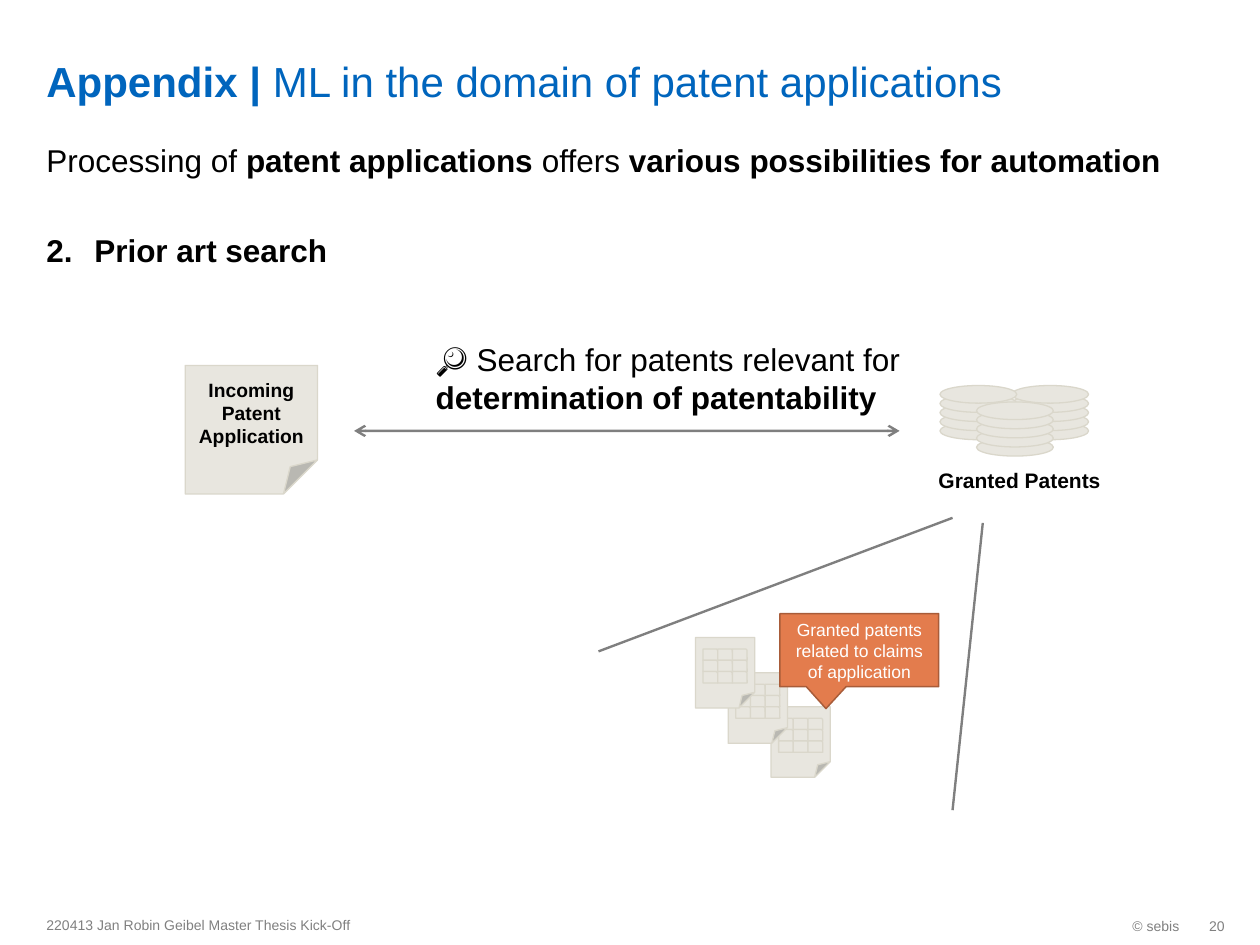
from pptx import Presentation
from pptx.dml.color import RGBColor
from pptx.enum.shapes import MSO_CONNECTOR as CONN, MSO_SHAPE as SHAPE
from pptx.enum.text import MSO_ANCHOR as ANCHOR, MSO_AUTO_SIZE as AUTO, PP_ALIGN as ALIGN
from pptx.oxml.ns import qn
from pptx.util import Inches, Pt
from lxml import etree

BLUE, BLACK, GREY, WHITE = "0065BD", "000000", "808080", "FFFFFF"
PAPER, EDGE, ORANGE, RUST = "E8E6DF", "DAD7CB", "E37C4D", "A85C39"

TITLE = [[("Appendix | ", True), ("ML in the domain of patent applications", False)]]
BODY = [
    [("Processing of ", False), ("patent applications ", True), ("offers ", False),
     ("various possibilities for automation", True)],
    [("Prior art search", True)],
]
SEARCH = [
    [("🔎 Search for patents relevant for", False)],
    [("determination of patentability", True)],
]
FOOTER = [
    ("© sebis", (7.7, 7.19, 1.76, 0.32), ALIGN.RIGHT, False, 0.1),
    ("220413 Jan Robin Geibel Master Thesis Kick-Off", (0.27, 7.18, 4.73, 0.32), ALIGN.LEFT, True, 0.1),
    ("20", (9.45, 7.19, 0.27, 0.32), ALIGN.RIGHT, False, 0),
]
COIN_STACKS = [(8.03, 3.06), (7.46, 3.06), (7.75, 3.19)]
COINS, COIN_W, COIN_H, COIN_SPAN = 5, 0.61, 0.14, 0.29
DOCUMENTS = [(6.12, 5.61), (5.78, 5.34), (5.52, 5.06)]
GRID, GRID_W, GRID_H = 3, 0.35, 0.27
LINES = [
    ((2.81, 3.42), (7.14, 3.42), True),
    ((7.56, 6.43), (7.8, 4.15), False),
    ((4.75, 5.17), (7.56, 4.11), False),
]


def color(value):
    return RGBColor.from_string(value)


def box(at):
    return [Inches(v) for v in at]


def write(sp, paragraphs, size, ink, align=ALIGN.LEFT, anchor=ANCHOR.TOP, wrap=True):
    tf = sp.text_frame
    tf.word_wrap = wrap
    tf.vertical_anchor = anchor
    for i, runs in enumerate(paragraphs):
        p = tf.add_paragraph() if i else tf.paragraphs[0]
        p.alignment = align
        for text, bold in runs:
            r = p.add_run()
            r.text = text
            r.font.name = "Arial"
            r.font.size = Pt(size)
            r.font.bold = bold
            r.font.color.rgb = color(ink)
    return tf


def add_text(s, at, *args, **kwargs):
    return write(s.shapes.add_textbox(*box(at)), *args, **kwargs)


def add_shape(shapes, kind, at, fill=PAPER, line=EDGE, width=0.75):
    sp = shapes.add_shape(kind, *box(at))
    sp.shadow.inherit = False
    sp.fill.solid()
    sp.fill.fore_color.rgb = color(fill)
    sp.line.color.rgb = color(line)
    sp.line.width = Pt(width)
    return sp


def add_page(shapes, at):
    sp = add_shape(shapes, SHAPE.FOLDED_CORNER, at)
    geometry = sp._element.spPr.find(qn("a:prstGeom"))
    guides = geometry.find(qn("a:avLst"))
    if guides is None:
        guides = etree.SubElement(geometry, qn("a:avLst"))
    etree.SubElement(guides, qn("a:gd"), name="adj", fmla="val 26500")
    return sp


def add_coins(s, left, top):
    shapes = s.shapes.add_group_shape().shapes
    step = COIN_SPAN / (COINS - 1)
    for i in reversed(range(COINS)):
        add_shape(shapes, SHAPE.OVAL, (left, top + i * step, COIN_W, COIN_H))


def add_document(s, left, top):
    shapes = s.shapes.add_group_shape().shapes
    add_page(shapes, (left, top, 0.47, 0.56))
    w, h = GRID_W / GRID, GRID_H / GRID
    for row in range(GRID):
        for col in range(GRID):
            add_shape(shapes, SHAPE.ROUND_1_RECTANGLE,
                      (left + 0.06 + col * w, top + 0.09 + row * h, w, h))


def add_line(s, start, end, arrows):
    cx = s.shapes.add_connector(CONN.STRAIGHT, *box(start + end))
    cx.line.color.rgb = color(BLACK)
    cx.line.width = Pt(1.35)
    spPr = cx._element.spPr
    ln = spPr.find(qn("a:ln"))
    etree.SubElement(ln.find(".//" + qn("a:srgbClr")), qn("a:alpha"), val="50000")
    if arrows:
        for end_tag in ("a:headEnd", "a:tailEnd"):
            etree.SubElement(ln, qn(end_tag), type="arrow")
    etree.SubElement(spPr, qn("a:effectLst"))


def number_paragraph(p, start, indent):
    pPr = p._p.get_or_add_pPr()
    pPr.set("marL", str(Inches(indent)))
    pPr.set("indent", str(-Inches(indent)))
    etree.SubElement(pPr, qn("a:buFont"), typeface="+mj-lt")
    etree.SubElement(pPr, qn("a:buAutoNum"), type="arabicPeriod", startAt=str(start))


def main():
    prs = Presentation()
    prs.slide_width, prs.slide_height = Inches(10), Inches(7.5)
    s = prs.slides.add_slide(prs.slide_layouts[6])

    tf = add_text(s, (0.27, 1.07, 9.45, 5.91), BODY, 18, BLACK)
    tf.paragraphs[1].space_before = Pt(30)
    number_paragraph(tf.paragraphs[1], 2, 0.38)

    tf = add_text(s, (0.27, 0.05, 8.24, 0.79), TITLE, 24, BLUE, anchor=ANCHOR.BOTTOM)
    tf.margin_top = tf.margin_bottom = 0

    for text, at, align, wrap, right in FOOTER:
        tf = add_text(s, at, [[(text, False)]], 8, GREY, align, ANCHOR.MIDDLE, wrap)
        tf.margin_right = Inches(right)

    application = add_page(s.shapes, (1.47, 2.9, 1.05, 1.02))
    write(application, [[("Incoming Patent Application", True)]], 11, BLACK, ALIGN.CENTER, ANCHOR.MIDDLE)

    for left, top in COIN_STACKS:
        add_coins(s, left, top)

    for at, paragraphs, size in [
        ((7.35, 3.66, 1.5, 0.3), [[("Granted Patents", True)]], 12),
        ((3.36, 2.65, 3.99, 0.71), SEARCH, 18),
    ]:
        tf = add_text(s, at, paragraphs, size, BLACK, wrap=False)
        tf.auto_size = AUTO.SHAPE_TO_FIT_TEXT

    for left, top in DOCUMENTS:
        add_document(s, left, top)

    callout = add_shape(s.shapes, SHAPE.RECTANGULAR_CALLOUT, (6.19, 4.87, 1.26, 0.58), ORANGE, RUST, 0.85)
    callout.adjustments[0], callout.adjustments[1] = -0.21, 0.8
    write(callout, [[("Granted patents related to claims of application", False)]],
          10, WHITE, ALIGN.CENTER, ANCHOR.MIDDLE)

    for start, end, arrows in LINES:
        add_line(s, start, end, arrows)

    prs.save("out.pptx")


if __name__ == "__main__":
    main()
